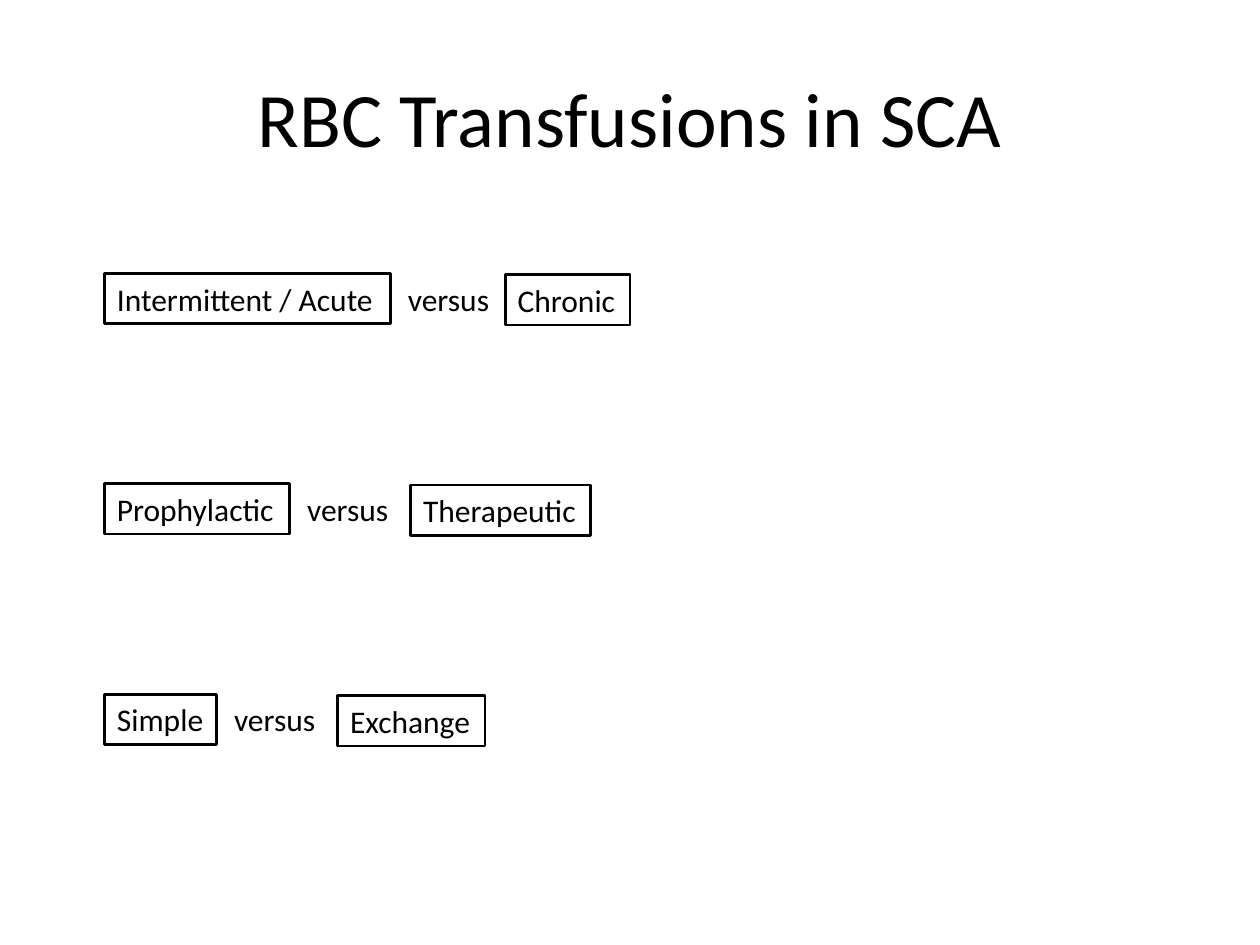
from dataclasses import dataclass

from pptx import Presentation
from pptx.dml.color import RGBColor
from pptx.enum.text import MSO_ANCHOR, MSO_AUTO_SIZE, PP_ALIGN
from pptx.util import Inches, Pt

LEFT, CENTER = PP_ALIGN.LEFT, PP_ALIGN.CENTER
TOP, MIDDLE = MSO_ANCHOR.TOP, MSO_ANCHOR.MIDDLE
GROW = MSO_AUTO_SIZE.SHAPE_TO_FIT_TEXT


@dataclass(frozen=True)
class Theme:
    font: str = "Calibri"
    ink: RGBColor = RGBColor(0, 0, 0)
    title: int = 44
    body: int = 18
    line: float = 1.5


THEME = Theme()


def add_text(s, box, text, size, align, anchor):
    sp = s.shapes.add_textbox(*map(Inches, box))
    tf = sp.text_frame
    tf.word_wrap = True
    tf.vertical_anchor = anchor
    p = tf.paragraphs[0]
    p.alignment = align
    r = p.add_run()
    r.text = text
    r.font.name = THEME.font
    r.font.size = Pt(size)
    r.font.color.rgb = THEME.ink
    return sp


def add_label(s, box, text, align=LEFT):
    sp = add_text(s, box, text, THEME.body, align, TOP)
    sp.text_frame.word_wrap = False
    sp.text_frame.auto_size = GROW
    return sp


def add_outlined_label(s, box, text):
    sp = add_label(s, box, text)
    sp.line.color.rgb = THEME.ink
    sp.line.width = Pt(THEME.line)


def add_title(s, box, text):
    add_text(s, box, text, THEME.title, CENTER, MIDDLE)


def add_comparison(s, box, first, first_w, second, second_x, second_w):
    x, y, h = box
    add_outlined_label(s, (x, y, first_w, h), first)
    add_label(s, (x + first_w + 0.03, y, 0.86, h), "versus", CENTER)
    add_outlined_label(s, (second_x, y + 0.01, second_w, h), second)


def main():
    prs = Presentation()
    prs.slide_width, prs.slide_height = Inches(10), Inches(7.5)
    s = prs.slides.add_slide(prs.slide_layouts[6])
    add_title(s, (0.5, 0.3, 9, 1.25), "RBC Transfusions in SCA")
    comparisons = [
        ("Intermittent / Acute", 2.27, "Chronic", 4.01, 0.99),
        ("Prophylactic", 1.47, "Therapeutic", 3.26, 1.43),
        ("Simple", 0.89, "Exchange", 2.68, 1.17),
    ]
    for i, comparison in enumerate(comparisons):
        add_comparison(s, (0.83, 2.17 + i * 1.67, 0.4), *comparison)
    prs.save("out.pptx")


if __name__ == "__main__":
    main()
